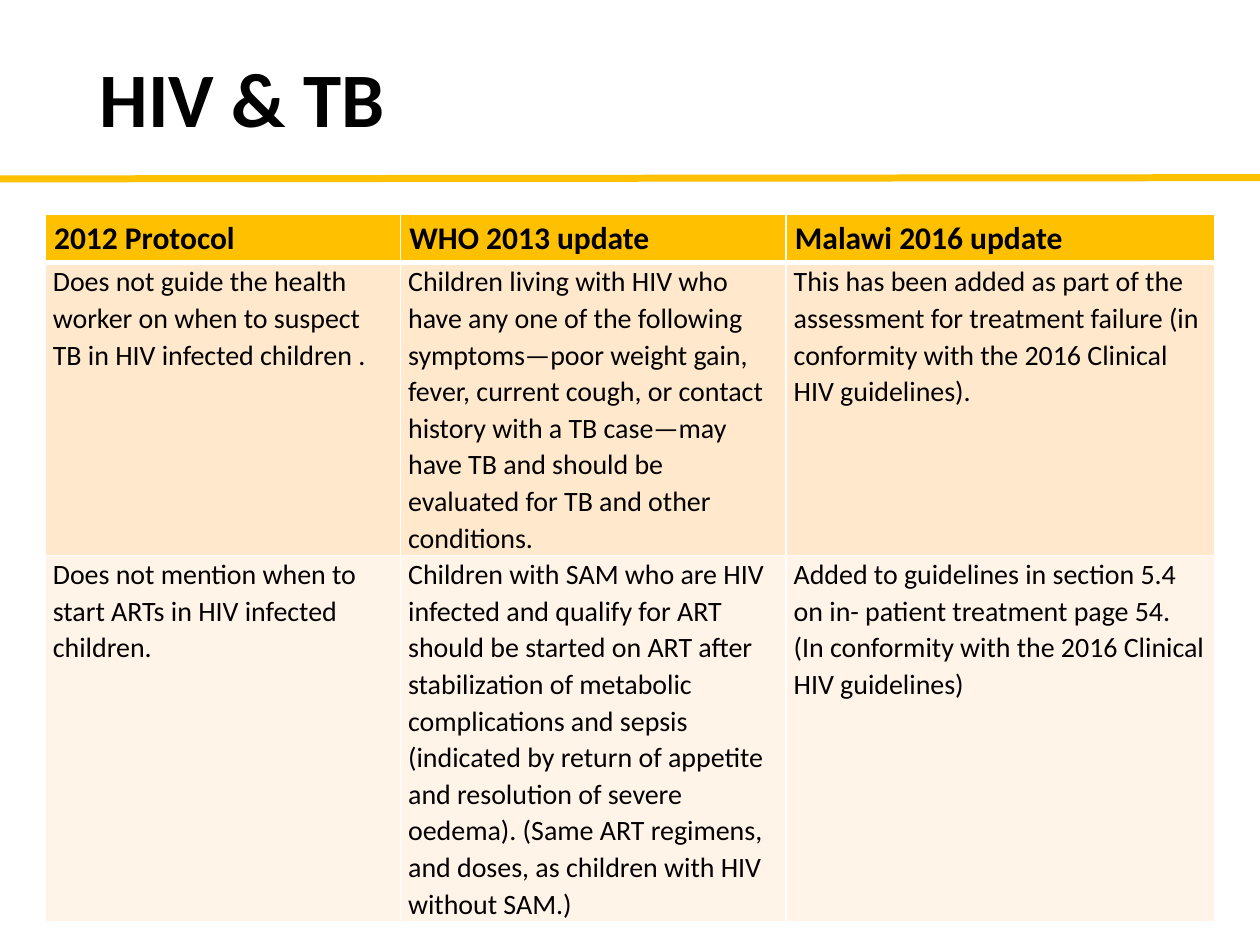
from lxml.etree import SubElement
from pptx import Presentation
from pptx.dml.color import RGBColor
from pptx.enum.shapes import MSO_CONNECTOR as Connector
from pptx.enum.text import MSO_ANCHOR as Anchor, PP_ALIGN as Align
from pptx.oxml.ns import qn
from pptx.util import Inches, Pt

GOLD = "FFC000"
BLACK = "000000"
WHITE = "FFFFFF"
ROW_FILLS = [GOLD, "FFE8CC", "FFF4E7"]
COLUMN_WIDTHS = [2.82, 3.06, 3.4]
ROW_HEIGHTS = [0.35, 2.25, 2.82]
ROWS = [
    ["2012 Protocol", "WHO 2013 update", "Malawi 2016 update"],
    [
        "Does not guide the health worker on when to suspect TB in HIV infected children .",
        "Children living with HIV who have any one of the following symptoms—poor weight gain, "
        "fever, current cough, or contact history with a TB case—may have TB and should be "
        "evaluated for TB and other conditions.",
        "This has been added as part of the assessment for treatment failure "
        "(in conformity with the 2016 Clinical HIV guidelines).",
    ],
    [
        "Does not mention when to start ARTs in HIV infected children.",
        "Children with SAM who are HIV infected and qualify for ART should be started on ART "
        "after stabilization of metabolic complications and sepsis (indicated by return of "
        "appetite and resolution of severe oedema). (Same ART regimens, and doses, as children "
        "with HIV without SAM.)",
        "Added to guidelines in section 5.4 on in- patient treatment page 54. "
        "(In conformity with the 2016 Clinical HIV guidelines)",
    ],
]


def color(value):
    return RGBColor.from_string(value)


class SlideBuilder:
    font_name = "Calibri"

    def __init__(self, slide):
        self.slide = slide

    def style(self, paragraph, size, bold, spacing):
        paragraph.alignment = Align.LEFT
        paragraph.line_spacing = spacing
        font = paragraph.font
        font.name = self.font_name
        font.size = Pt(size)
        font.bold = bold
        font.color.rgb = color(BLACK)

    def rule(self, start, end, line_color, width):
        connector = self.slide.shapes.add_connector(
            Connector.STRAIGHT, *(Inches(value) for value in start + end)
        )
        connector.line.color.rgb = color(line_color)
        connector.line.width = Pt(width)
        SubElement(connector._element.spPr, qn("a:effectLst"))

    def title(self, text, left, top, width, height):
        shape = self.slide.shapes.title
        shape.left, shape.top = Inches(left), Inches(top)
        shape.width, shape.height = Inches(width), Inches(height)
        frame = shape.text_frame
        frame.text = text
        frame.vertical_anchor = Anchor.MIDDLE
        self.style(frame.paragraphs[0], 44, True, 0.9)

    def borders(self, cell, widths):
        properties = cell._tc.get_or_add_tcPr()
        for side, width in widths.items():
            line = SubElement(properties, qn(f"a:ln{side}"), w=str(Pt(width)))
            fill = SubElement(line, qn("a:solidFill"))
            SubElement(fill, qn("a:srgbClr"), val=WHITE)

    def cell(self, cell, text, fill, is_header, widths):
        horizontal, vertical = (0.07, 0.04) if is_header else (0.06, 0)
        cell.margin_left = cell.margin_right = Inches(horizontal)
        cell.margin_top = cell.margin_bottom = Inches(vertical)
        self.borders(cell, widths)
        cell.fill.solid()
        cell.fill.fore_color.rgb = color(fill)
        cell.text = text
        size, spacing = (18, 1) if is_header else (16, 1.07)
        self.style(cell.text_frame.paragraphs[0], size, is_header, spacing)

    def table(self, left, top, rows, column_widths, row_heights, fills):
        table = self.slide.shapes.add_table(
            len(rows), len(column_widths), Inches(left), Inches(top),
            Inches(sum(column_widths)), Inches(sum(row_heights)),
        ).table
        for column, width in zip(table.columns, column_widths):
            column.width = Inches(width)
        for index, (texts, height, fill) in enumerate(zip(rows, row_heights, fills)):
            table.rows[index].height = Inches(height)
            widths = {
                "L": 1,
                "R": 1,
                "T": 3 if index == 1 else 1,
                "B": 3 if index == 0 else 1,
            }
            for column_index, text in enumerate(texts):
                self.cell(table.cell(index, column_index), text, fill, index == 0, widths)


def main():
    presentation = Presentation()
    presentation.slide_width = Inches(10)
    presentation.slide_height = Inches(7.5)
    builder = SlideBuilder(presentation.slides.add_slide(presentation.slide_layouts[5]))
    builder.rule((0, 1.42), (10, 1.41), GOLD, 4)
    builder.title("HIV & TB", 0.69, 0.4, 8.62, 0.83)
    builder.table(0.36, 1.7, ROWS, COLUMN_WIDTHS, ROW_HEIGHTS, ROW_FILLS)
    presentation.save("out.pptx")


if __name__ == "__main__":
    main()
